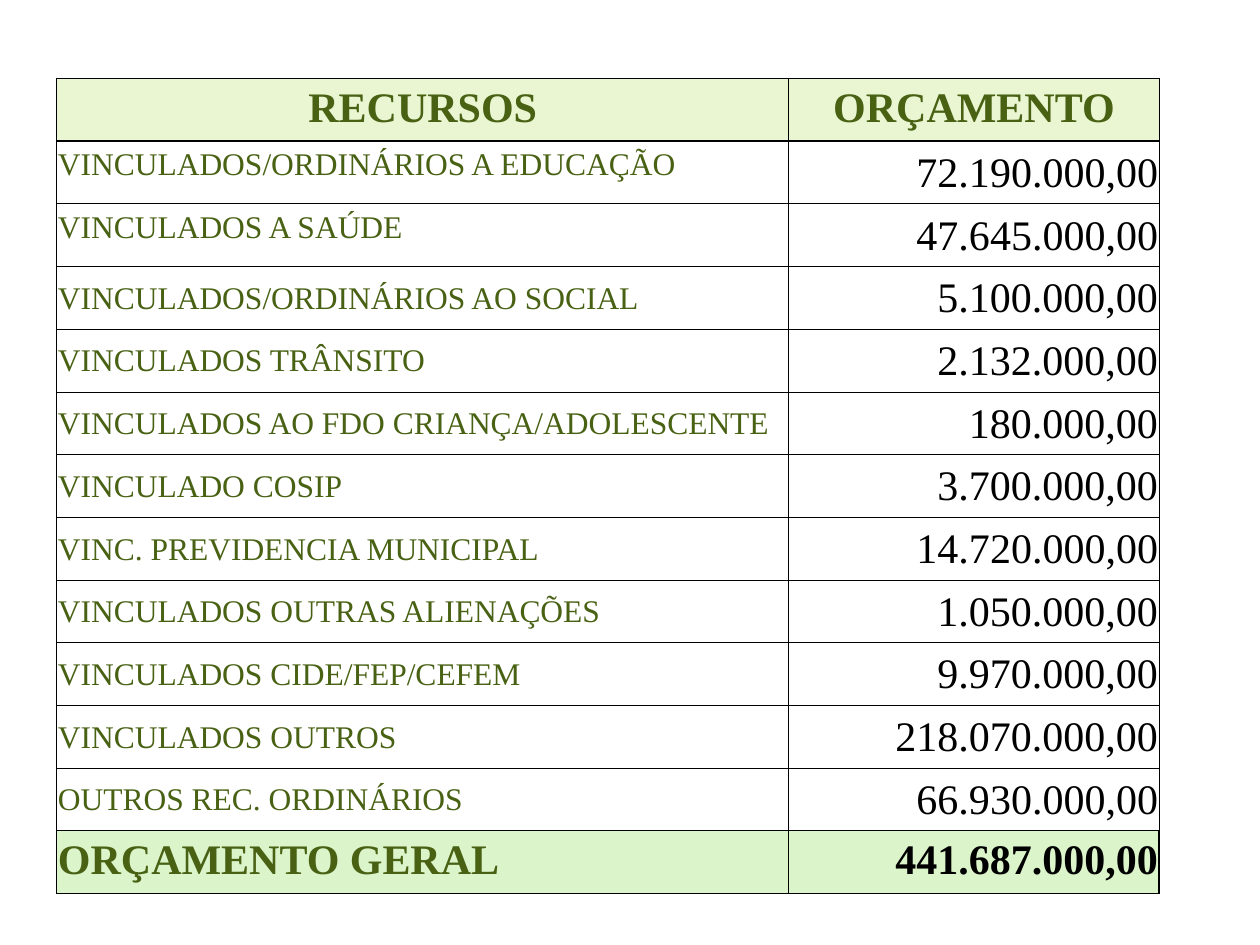
from lxml import etree
from pptx import Presentation, util as u
from pptx.dml.color import RGBColor
from pptx.enum import text
from pptx.oxml.ns import qn

LEFT, CENTER, RIGHT = text.PP_ALIGN.LEFT, text.PP_ALIGN.CENTER, text.PP_ALIGN.RIGHT
TOP, MIDDLE = text.MSO_ANCHOR.TOP, text.MSO_ANCHOR.MIDDLE
THIN, THICK = 0.5, 0.96

HEADINGS = ("RECURSOS", "ORÇAMENTO")
RESOURCES = [
    ("VINCULADOS/ORDINÁRIOS A EDUCAÇÃO", "72.190.000,00"),
    ("VINCULADOS A SAÚDE", "47.645.000,00"),
    ("VINCULADOS/ORDINÁRIOS AO SOCIAL", "5.100.000,00"),
    ("VINCULADOS TRÂNSITO", "2.132.000,00"),
    ("VINCULADOS AO FDO CRIANÇA/ADOLESCENTE", "180.000,00"),
    ("VINCULADO COSIP", "3.700.000,00"),
    ("VINC. PREVIDENCIA MUNICIPAL", "14.720.000,00"),
    ("VINCULADOS OUTRAS ALIENAÇÕES", "1.050.000,00"),
    ("VINCULADOS CIDE/FEP/CEFEM", "9.970.000,00"),
    ("VINCULADOS OUTROS", "218.070.000,00"),
    ("OUTROS REC. ORDINÁRIOS", "66.930.000,00"),
]
TOTAL = ("ORÇAMENTO GERAL", "441.687.000,00")


def rgb(color):
    return RGBColor.from_string(color)


def write(frame, words, *, font, size, color, bold=False, align=LEFT):
    paragraph = frame.paragraphs[0]
    paragraph.alignment = align
    run = paragraph.add_run()
    run.text = words
    run.font.name, run.font.size, run.font.bold = font, u.Pt(size), bold
    run.font.color.rgb = rgb(color)


class BudgetSlide:
    FONT = "Times New Roman"
    GREEN, BLACK = "486113", "000000"
    HEADING_FILL, TOTAL_FILL = "EAF6D1", "DBF4CA"

    def __init__(self, deck):
        self.deck = deck
        self.slide = deck.slides.add_slide(deck.slide_layouts[6])

    def table(self, left, top, widths, height, rows):
        """Place an empty grid; lengths are shares of the slide's size."""
        across, down = self.deck.slide_width, self.deck.slide_height
        frame = self.slide.shapes.add_table(
            rows, len(widths), int(left * across), int(top * down),
            int(sum(widths) * across), int(height * down))
        grid = frame.table
        grid.first_row = grid.horz_banding = False
        for column, width in zip(grid.columns, widths):
            column.width = int(width * across)
        for row in grid.rows:
            row.height = int(height * down / rows)
        return grid

    def cell(self, cell, words, *, borders, fill=None, anchor=TOP, size=24, **style):
        cell.margin_left = cell.margin_right = u.Inches(0.01)
        cell.margin_top = u.Inches(0.05 if anchor == TOP else 0.01)
        cell.margin_bottom = u.Inches(0.05 if anchor == TOP else 0)
        cell.vertical_anchor = anchor
        if fill:
            cell.fill.solid()
            cell.fill.fore_color.rgb = rgb(fill)
        else:
            cell.fill.background()
        self.borders(cell, borders)
        write(cell.text_frame, words, font=self.FONT, size=size, **style)

    def borders(self, cell, widths):
        """Draw the left, right, top and bottom lines, in that order."""
        properties = cell._tc.get_or_add_tcPr()
        for place, (side, width) in enumerate(zip("LRTB", widths)):
            line = etree.Element(qn(f"a:ln{side}"), w=str(u.Pt(width)))
            solid = etree.SubElement(line, qn("a:solidFill"))
            etree.SubElement(solid, qn("a:srgbClr"), val=self.BLACK)
            properties.insert(place, line)


def main():
    deck = Presentation()
    deck.slide_width, deck.slide_height = u.Inches(10), u.Inches(7.5)
    page = BudgetSlide(deck)
    last = len(RESOURCES) + 1
    grid = page.table(0.045, 0.083, (0.581, 0.294), 0.863, last + 1)

    # Heading row
    for column, heading in enumerate(HEADINGS):
        page.cell(grid.cell(0, column), heading, fill=page.HEADING_FILL,
                  color=page.GREEN, bold=True, align=CENTER,
                  borders=(THIN if column else THICK, THIN, THICK, THICK))

    # Resources: the first two names sit at the top of their cells
    for row, (resource, amount) in enumerate(RESOURCES, 1):
        upper = THICK if row == 1 else THIN
        page.cell(grid.cell(row, 0), resource, size=18, color=page.GREEN,
                  anchor=TOP if row <= 2 else MIDDLE,
                  borders=(THICK, THIN, upper, THIN))
        page.cell(grid.cell(row, 1), amount, color=page.BLACK, align=RIGHT,
                  anchor=MIDDLE, borders=(THIN, THIN, upper, THIN))

    # Total row
    page.cell(grid.cell(last, 0), TOTAL[0], fill=page.TOTAL_FILL, bold=True,
              color=page.GREEN, borders=(THICK, THICK, THIN, THICK))
    page.cell(grid.cell(last, 1), TOTAL[1], fill=page.TOTAL_FILL, bold=True,
              color=page.BLACK, align=RIGHT, borders=(THICK, THICK, THIN, THICK))

    deck.save("out.pptx")


if __name__ == "__main__":
    main()
